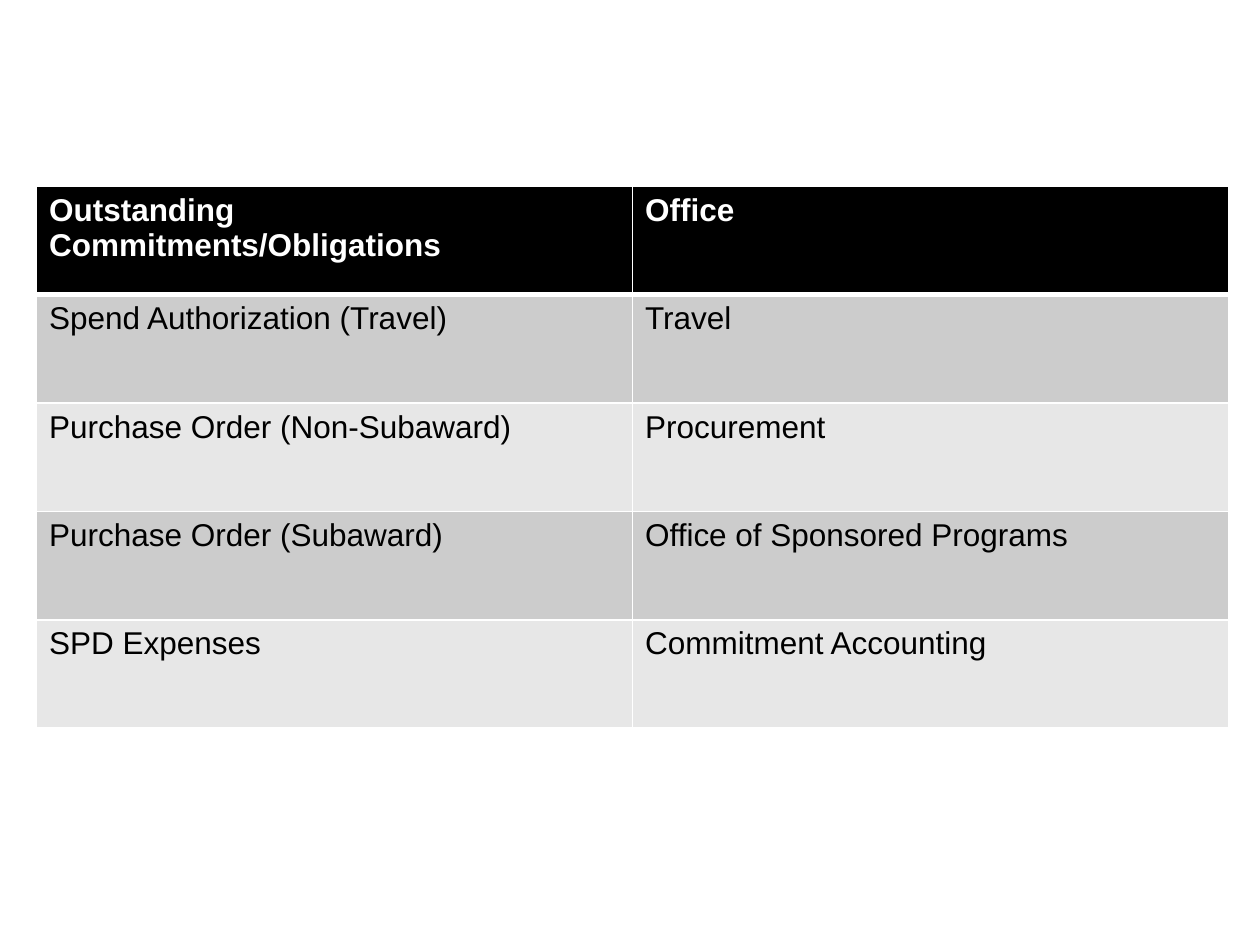
from lxml.etree import SubElement
from pptx import Presentation
from pptx.dml.color import RGBColor
from pptx.oxml.ns import qn
from pptx.util import Inches, Pt

COLORS = {
    "header": "000000",
    "header_text": "FFFFFF",
    "text": "000000",
    "band_dark": "CCCCCC",
    "band_light": "E7E7E7",
    "border": "FFFFFF",
}

ROWS = [
    ("Outstanding Commitments/Obligations", "Office"),
    ("Spend Authorization (Travel)", "Travel"),
    ("Purchase Order (Non-Subaward)", "Procurement"),
    ("Purchase Order (Subaward)", "Office of Sponsored Programs"),
    ("SPD Expenses", "Commitment Accounting"),
]


class SlideBuilder:
    def __init__(self, slide, font="Arial", size=18):
        self.slide = slide
        self.font = font
        self.size = size

    def borders(self, cell, **widths):
        """Draw the cell's edges; widths are points, keyed L, R, T and B in that order."""
        tc_pr = cell._tc.get_or_add_tcPr()
        for side, width in widths.items():
            ln = SubElement(tc_pr, qn(f"a:ln{side}"), w=str(Pt(width)))
            fill = SubElement(ln, qn("a:solidFill"))
            SubElement(fill, qn("a:srgbClr"), val=COLORS["border"])

    def cell(self, cell, text, fill, color, bold):
        cell.fill.solid()
        cell.fill.fore_color.rgb = RGBColor.from_string(COLORS[fill])
        cell.text_frame.text = text
        font = cell.text_frame.paragraphs[0].runs[0].font
        font.name = self.font
        font.size = Pt(self.size)
        font.bold = bold
        font.color.rgb = RGBColor.from_string(COLORS[color])

    def table(self, rows, left, top, col_width, row_height):
        n_rows, n_cols = len(rows), len(rows[0])
        table = self.slide.shapes.add_table(
            n_rows, n_cols, Inches(left), Inches(top),
            Inches(col_width * n_cols), Inches(row_height * n_rows)).table
        for col in table.columns:
            col.width = Inches(col_width)
        for i, values in enumerate(rows):
            table.rows[i].height = Inches(row_height)
            header = i == 0
            band = "band_dark" if i % 2 else "band_light"
            for j, text in enumerate(values):
                cell = table.cell(i, j)
                self.borders(cell, L=1, R=1, T=3 if i == 1 else 1, B=3 if header else 1)
                self.cell(cell, text, "header" if header else band,
                          "header_text" if header else "text", header)


def main():
    prs = Presentation()
    prs.slide_width, prs.slide_height = Inches(10), Inches(7.5)
    s = SlideBuilder(prs.slides.add_slide(prs.slide_layouts[6]))
    s.table(ROWS, left=0.29, top=1.48, col_width=4.73, row_height=0.86)
    prs.save("out.pptx")


if __name__ == "__main__":
    main()
